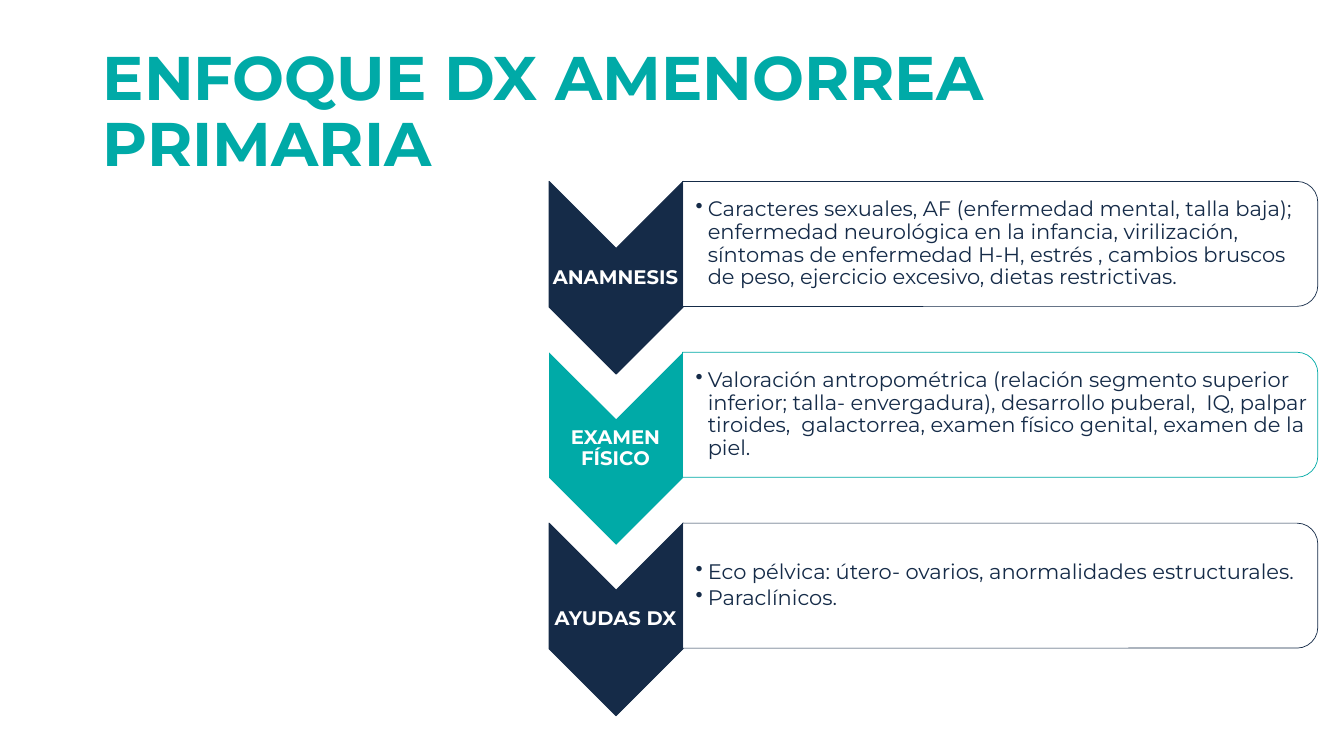
"""Build the slide on the diagnostic approach to primary amenorrhea."""
from lxml.etree import SubElement
from pptx import Presentation
from pptx.dml.color import RGBColor
from pptx.enum.shapes import MSO_SHAPE
from pptx.enum.text import MSO_ANCHOR, PP_ALIGN
from pptx.oxml.ns import qn
from pptx.util import Inches, Pt

TITLE = "ENFOQUE DX AMENORREA PRIMARIA"
STEPS = [
    ("ANAMNESIS", "navy", [
        "Caracteres sexuales, AF (enfermedad mental, talla baja); enfermedad "
        "neurológica en la infancia, virilización, síntomas de enfermedad H-H, "
        "estrés , cambios bruscos de peso, ejercicio excesivo, dietas restrictivas."]),
    ("EXAMEN FÍSICO", "teal", [
        "Valoración antropométrica (relación segmento superior inferior; talla- "
        "envergadura), desarrollo puberal,  IQ, palpar tiroides,  galactorrea, "
        "examen físico genital, examen de la piel."]),
    ("AYUDAS DX", "navy", [
        "Eco pélvica: útero- ovarios, anormalidades estructurales.",
        "Paraclínicos."]),
]
THEME = {
    "navy": RGBColor(0x15, 0x2B, 0x48),
    "teal": RGBColor(0x00, 0xAA, 0xA7),
    "white": RGBColor(0xFF, 0xFF, 0xFF),
    "font": "Montserrat",
    "title": Pt(44), "label": Pt(14), "detail": Pt(15),
    "chevron_line": Pt(0.75), "panel_line": Pt(0.5),
}
FIRST_TOP, STEP_PITCH = 1.8, 1.695
CHEVRON_X, CHEVRON_LENGTH, CHEVRON_WIDTH = 6.11, 1.91, 1.33
PANEL_X, PANEL_HEIGHT, PANEL_WIDTH = 9.92, 1.24, 6.3
BULLET_INDENT = 0.12


def apply(target, values):
    for name, value in values.items():
        setattr(target, name, value)


def style(paragraph, size, color, bold=False, **layout):
    apply(paragraph, {"line_spacing": 0.9, **layout})
    apply(paragraph.font, {"name": THEME["font"], "size": THEME[size], "bold": bold})
    paragraph.font.color.rgb = THEME[color]


def add_turned(slide, preset, center_x, center_y, length, width, fill):
    turned = slide.shapes.add_shape(
        preset, Inches(center_x - length / 2), Inches(center_y - width / 2),
        Inches(length), Inches(width))
    turned.rotation = 90
    turned.shadow.inherit = False
    turned.fill.solid()
    turned.fill.fore_color.rgb = THEME[fill]
    return turned


def outline(turned, color, weight):
    turned.line.color.rgb = THEME[color]
    turned.line.width = THEME[weight]


def add_frame(slide, left, top, width, height, inset):
    frame = slide.shapes.add_textbox(*map(Inches, (left, top, width, height))).text_frame
    edge = Inches(0.01)
    apply(frame, {"word_wrap": True, "vertical_anchor": MSO_ANCHOR.MIDDLE,
                  "margin_left": Inches(inset), "margin_right": edge,
                  "margin_top": edge, "margin_bottom": edge})
    return frame


def add_bullet(paragraph):
    properties = paragraph._p.get_or_add_pPr()
    properties.set("marL", str(Inches(BULLET_INDENT)))
    properties.set("indent", str(-Inches(BULLET_INDENT)))
    SubElement(properties, qn("a:buChar"), char="•")


def add_step(slide, top, label, color, details):
    chevron = add_turned(slide, MSO_SHAPE.CHEVRON, CHEVRON_X, top + CHEVRON_LENGTH / 2,
                         CHEVRON_LENGTH, CHEVRON_WIDTH, color)
    if color == "navy":
        outline(chevron, color, "chevron_line")
    else:
        chevron.line.fill.background()

    heading = add_frame(slide, 5.44, top + 0.67, CHEVRON_WIDTH, 0.57, 0.01).paragraphs[0]
    heading.text = label
    style(heading, "label", "white", True, alignment=PP_ALIGN.CENTER, space_after=Pt(5))

    panel = add_turned(slide, MSO_SHAPE.ROUND_2_SAME_RECTANGLE, PANEL_X,
                       top + PANEL_HEIGHT / 2, PANEL_HEIGHT, PANEL_WIDTH, "white")
    tint = panel._element.spPr.find(qn("a:solidFill")).find(qn("a:srgbClr"))
    SubElement(tint, qn("a:alpha"), val="90000")
    outline(panel, color, "panel_line")

    body = add_frame(slide, 6.78, top + 0.06, 6.24, 1.12, 0.12)
    for index, detail in enumerate(details):
        paragraph = body.add_paragraph() if index else body.paragraphs[0]
        paragraph.text = detail
        add_bullet(paragraph)
        style(paragraph, "detail", "navy", level=1, space_after=Pt(2.25))


def main():
    deck = Presentation()
    apply(deck, {"slide_width": Inches(13.33), "slide_height": Inches(7.5)})
    slide = deck.slides.add_slide(deck.slide_layouts[5])
    title = slide.shapes.title
    apply(title, {"left": Inches(0.92), "top": Inches(0.4),
                  "width": Inches(11.5), "height": Inches(1.45)})
    title.text_frame.text = TITLE
    apply(title.text_frame, {"word_wrap": True, "vertical_anchor": MSO_ANCHOR.MIDDLE})
    style(title.text_frame.paragraphs[0], "title", "teal", True, alignment=PP_ALIGN.LEFT)
    for index, step in enumerate(STEPS):
        add_step(slide, FIRST_TOP + index * STEP_PITCH, *step)
    deck.save("out.pptx")


if __name__ == "__main__":
    main()
